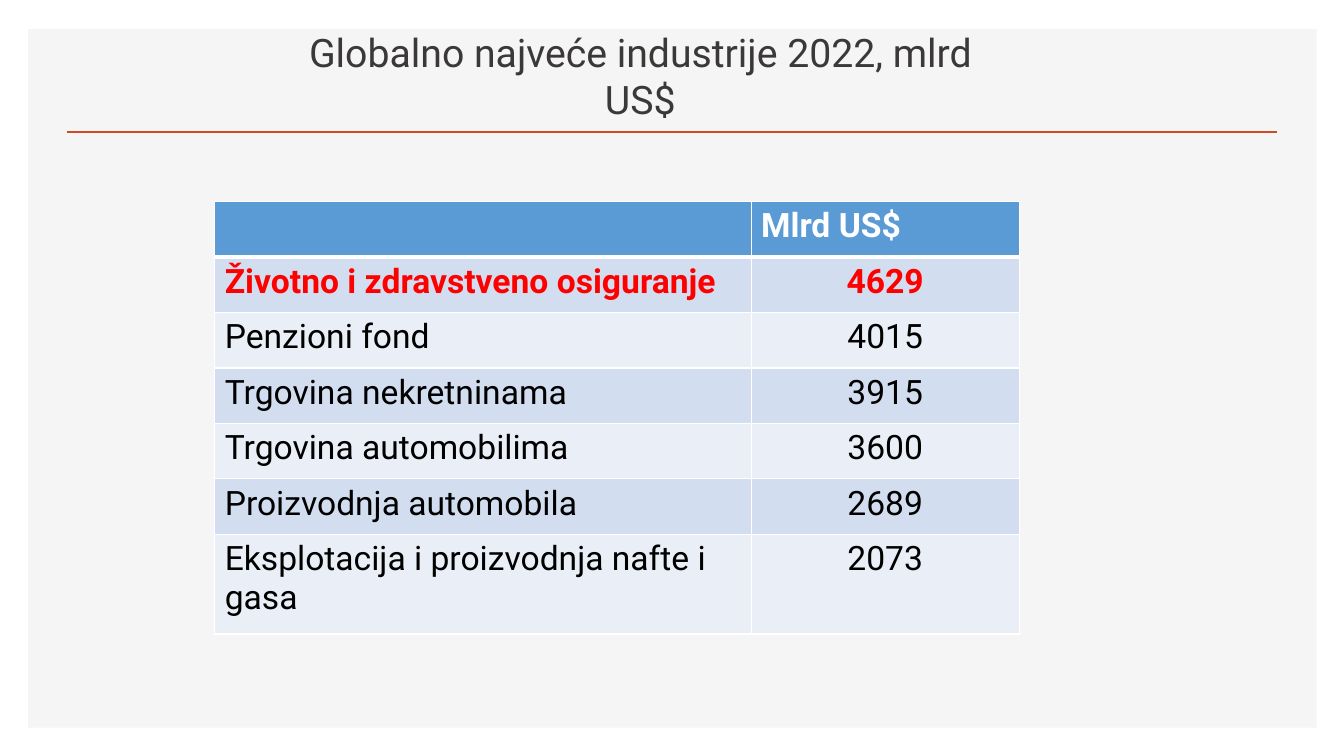
import lxml.etree
import pptx
import pptx.dml.color
import pptx.enum.shapes
import pptx.enum.text
import pptx.oxml.ns
import pptx.util

SLIDE_WIDTH, SLIDE_HEIGHT = 13.33, 7.5
FONT = "Roboto"
HEADER_FILL = "5B9BD5"
BAND_FILLS = ["D2DEEF", "EAEFF7"]
COLUMN_WIDTHS = [5.32, 2.66]
ROW_HEIGHT, LAST_ROW_HEIGHT = 0.55, 0.99
TITLE = "Globalno najveće industrije 2022, mlrd US$"
INDUSTRIES = [
    ("", "Mlrd US$"),
    ("Životno i zdravstveno osiguranje", "4629"),
    ("Penzioni fond", "4015"),
    ("Trgovina nekretninama", "3915"),
    ("Trgovina automobilima", "3600"),
    ("Proizvodnja automobila", "2689"),
    ("Eksplotacija i proizvodnja nafte i gasa", "2073"),
]
CENTER = pptx.enum.text.PP_ALIGN.CENTER
LEFT = pptx.enum.text.PP_ALIGN.LEFT


def color(value):
    return pptx.dml.color.RGBColor.from_string(value)


def inches(*lengths):
    return [pptx.util.Inches(length) for length in lengths]


def set_attributes(target, values):
    for name, value in values.items():
        setattr(target, name, value)


def paint(target, value):
    target.fill.solid()
    target.fill.fore_color.rgb = color(value)


def write_text(text_frame, text, size, text_color, alignment, bold=False):
    paragraph = text_frame.paragraphs[0]
    paragraph.alignment = alignment
    run = paragraph.add_run()
    run.text = text
    set_attributes(run.font, {"name": FONT, "size": pptx.util.Pt(size), "bold": bold})
    run.font.color.rgb = color(text_color)


def add_panel(slide):
    shape = slide.shapes.add_shape(
        pptx.enum.shapes.MSO_SHAPE.RECTANGLE, *inches(0.28, 0.29, 12.78, 6.93))
    shape.shadow.inherit = False
    paint(shape, "F5F5F5")
    shape.line.fill.background()


def add_rule(slide):
    connector = slide.shapes.add_connector(
        pptx.enum.shapes.MSO_CONNECTOR.STRAIGHT, *inches(0.66, 1.31, 12.67, 1.31))
    connector.line.width = pptx.util.Pt(2)
    connector.line.color.rgb = color("D24726")
    properties = connector._element.spPr
    lxml.etree.SubElement(properties, pptx.oxml.ns.qn("a:effectLst"))


def add_title(slide):
    text_frame = slide.shapes.add_textbox(*inches(2.59, 0.56, 7.52, 0.7)).text_frame
    set_attributes(text_frame, {
        "word_wrap": True,
        "auto_size": pptx.enum.text.MSO_AUTO_SIZE.NONE,
        "vertical_anchor": pptx.enum.text.MSO_ANCHOR.BOTTOM,
    })
    write_text(text_frame, TITLE, 28, "3B3838", CENTER)


def add_borders(cell, widths):
    properties = cell._tc.get_or_add_tcPr()
    for side, width in widths.items():
        border = lxml.etree.SubElement(
            properties, pptx.oxml.ns.qn(f"a:ln{side}"), w=str(pptx.util.Pt(width)))
        fill = lxml.etree.SubElement(border, pptx.oxml.ns.qn("a:solidFill"))
        lxml.etree.SubElement(fill, pptx.oxml.ns.qn("a:srgbClr"), val="FFFFFF")


def format_cell(cell, text, row, column):
    header, highlighted = row == 0, row == 1
    add_borders(cell, {"L": 1, "R": 1, "T": 3 if highlighted else 1, "B": 3 if header else 1})
    paint(cell, HEADER_FILL if header else BAND_FILLS[(row - 1) % 2])
    if text:
        text_color = {0: "FFFFFF", 1: "FF0000"}.get(row, "000000")
        alignment = CENTER if column and not header else LEFT
        write_text(cell.text_frame, text, 24, text_color, alignment, header or highlighted)


def add_industry_table(slide):
    heights = [ROW_HEIGHT] * (len(INDUSTRIES) - 1) + [LAST_ROW_HEIGHT]
    table = slide.shapes.add_table(
        len(heights), len(COLUMN_WIDTHS),
        *inches(2.13, 2, sum(COLUMN_WIDTHS), sum(heights))).table
    for column, width in zip(table.columns, COLUMN_WIDTHS):
        column.width = pptx.util.Inches(width)
    for row, height in zip(table.rows, heights):
        row.height = pptx.util.Inches(height)
    for row, texts in enumerate(INDUSTRIES):
        for column, text in enumerate(texts):
            format_cell(table.cell(row, column), text, row, column)


def main():
    presentation = pptx.Presentation()
    width, height = inches(SLIDE_WIDTH, SLIDE_HEIGHT)
    set_attributes(presentation, {"slide_width": width, "slide_height": height})
    slide = presentation.slides.add_slide(presentation.slide_layouts[6])
    add_panel(slide)
    add_rule(slide)
    add_title(slide)
    add_industry_table(slide)
    presentation.save("out.pptx")


if __name__ == "__main__":
    main()
